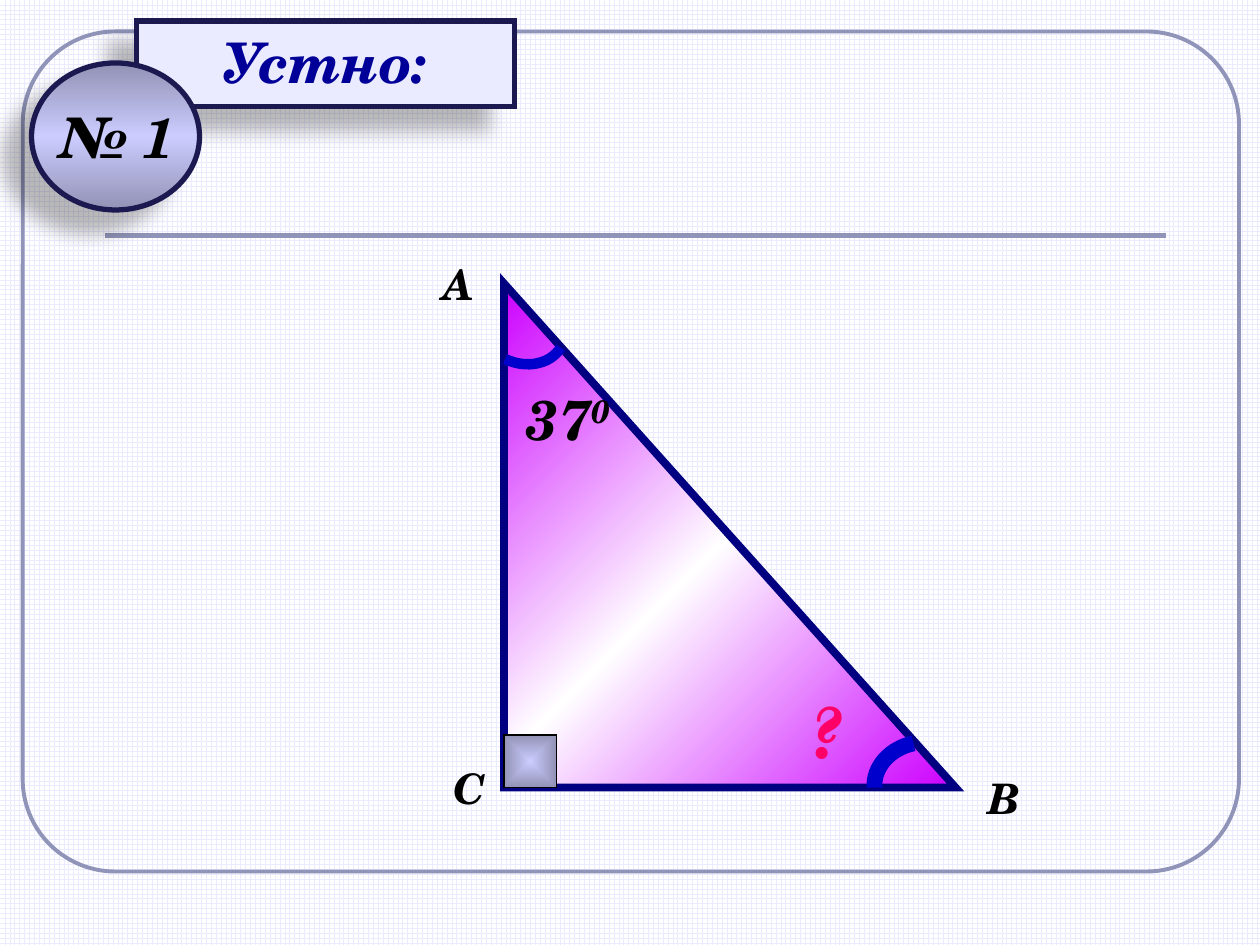
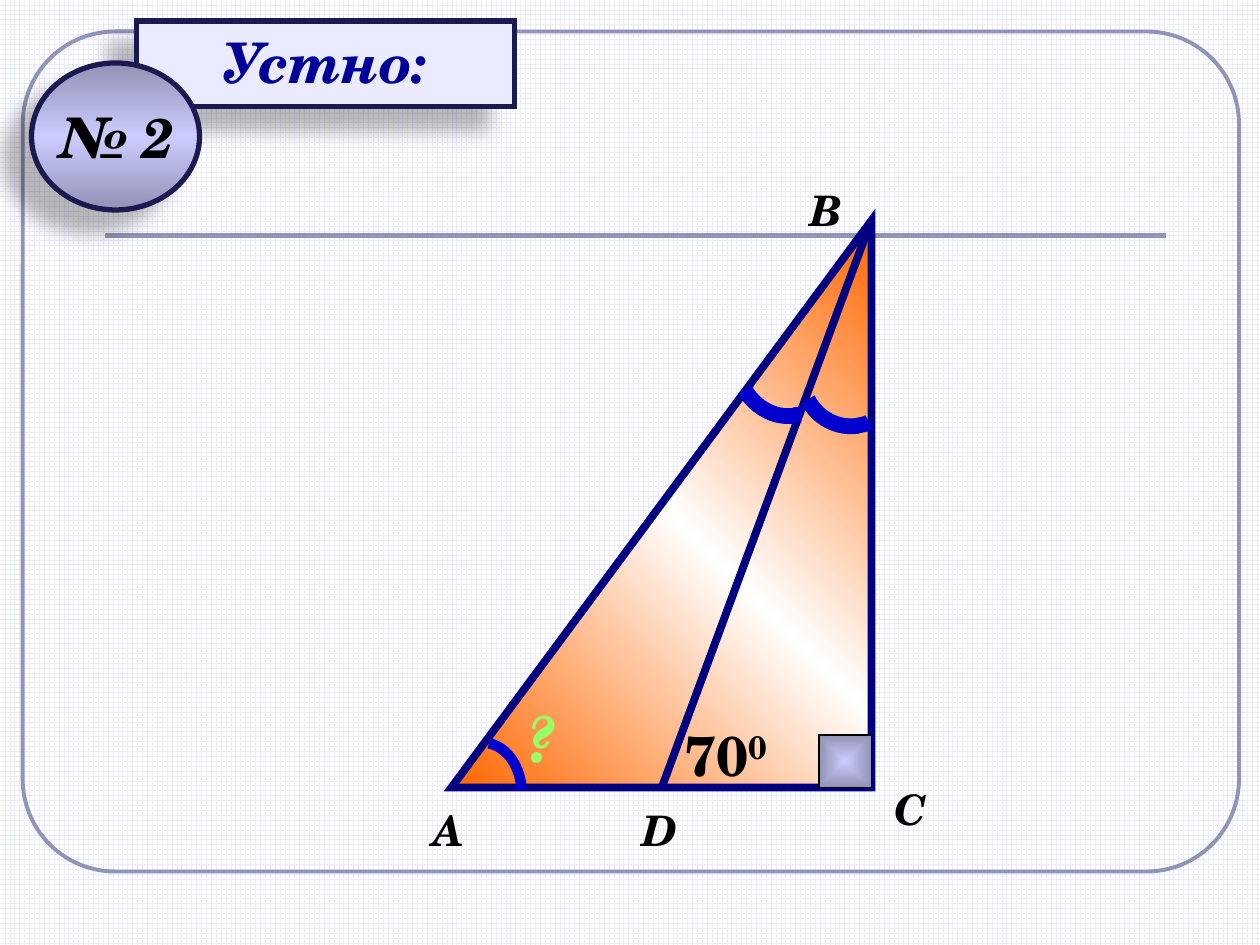
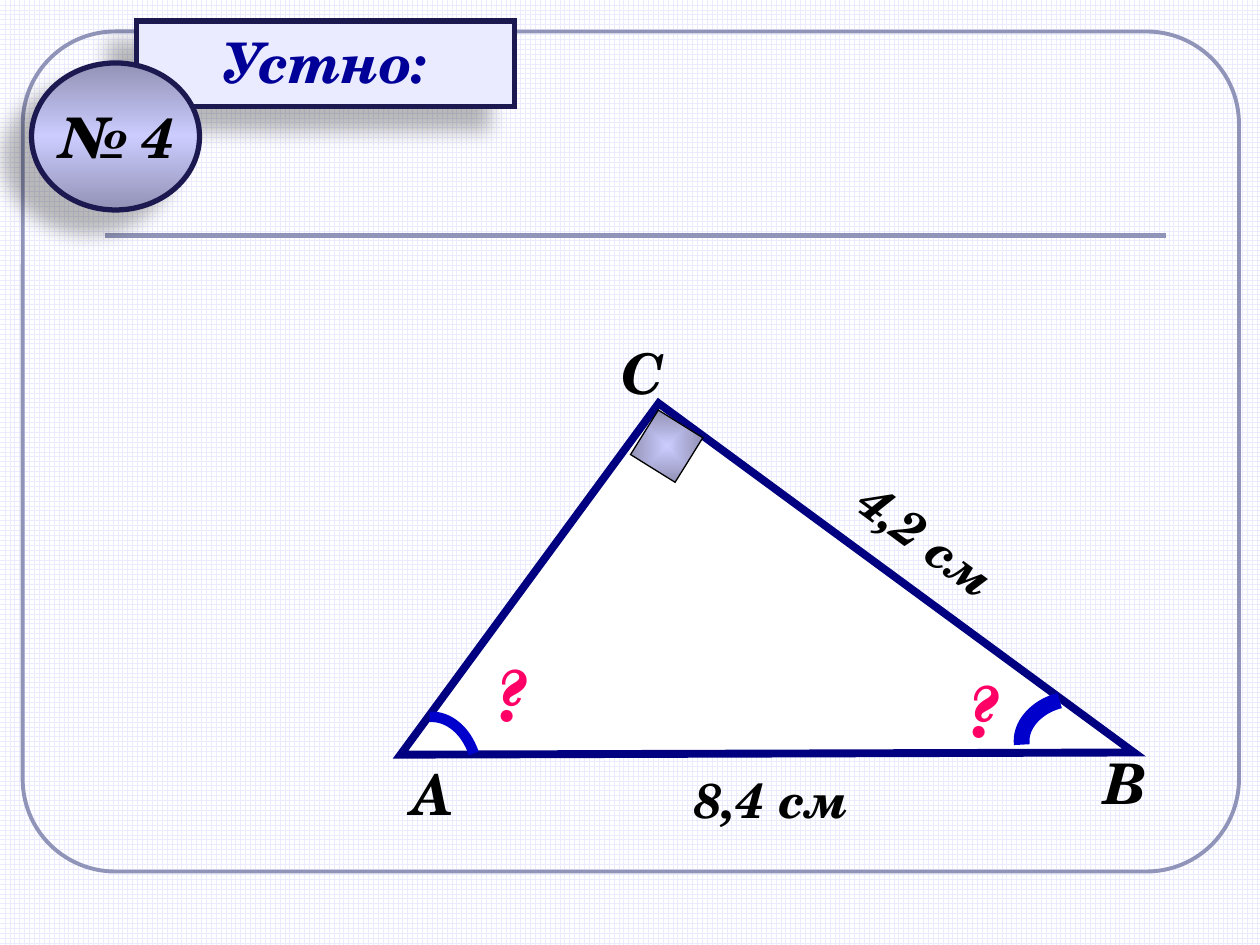
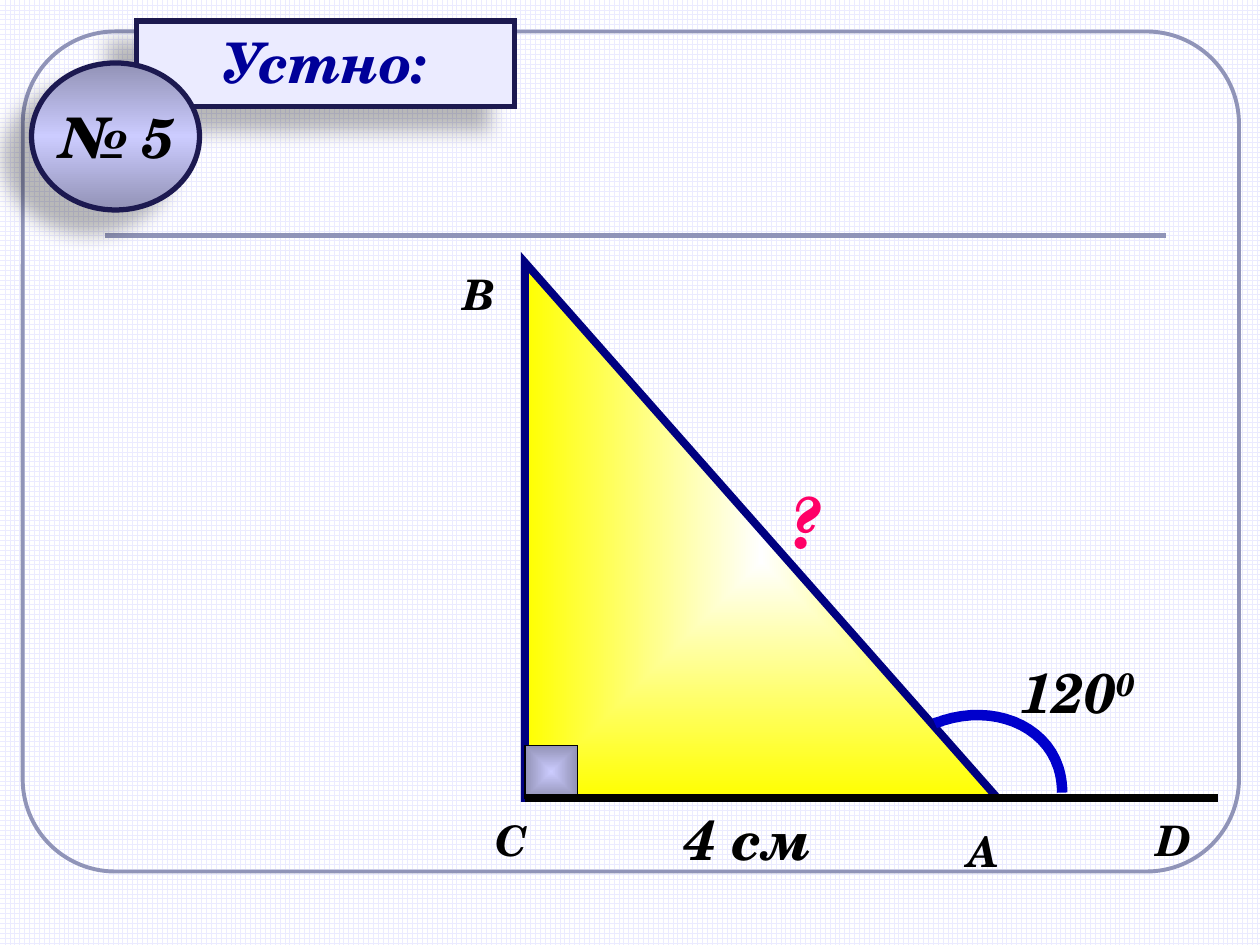
from dataclasses import dataclass

from lxml.etree import SubElement
from pptx import Presentation
from pptx.dml.color import RGBColor
from pptx.enum.dml import MSO_PATTERN
from pptx.enum.shapes import MSO_CONNECTOR, MSO_SHAPE
from pptx.enum.text import MSO_ANCHOR, MSO_AUTO_SIZE, PP_ALIGN
from pptx.oxml.ns import qn
from pptx.util import Pt


@dataclass(frozen=True)
class Theme:
    font: str = "TeX Gyre Schola"
    paper: str = "FFFFFF"
    panel: str = "EBEBFF"
    frame: str = "9094B8"
    border: str = "1C1950"
    title: str = "000099"
    ink: str = "000000"
    side: str = "000080"
    arc: str = "0000CC"
    steel: str = "9292B6"
    lilac: str = "CCCCFF"
    violet: str = "CC00FF"
    orange: str = "FF6600"
    olive: str = "99CC00"
    yellow: str = "FFFF00"
    pink: str = "FF0066"
    lime: str = "99FF66"
    vertex_size: int = 24
    length_size: int = 28
    heading_size: int = 32
    query_small: int = 36
    query_size: int = 40
    side_width: float = 4.5


THEME = Theme()
CORNER = 30  # side of the right-angle mark

# Text widths in ems, used to size the unwrapped boxes
EMS = {"А": 0.76, "В": 0.76, "С": 0.72, "D": 0.84, "?": 0.56,
       "37": 1.67, "70": 1.73, "120": 2.27,
       "4,2 см": 3.27, "8,4 см": 3.31, "4 см": 2.32}


# --- Fill, line and effect helpers ---

def rgb(code):
    return RGBColor.from_string(code)


def set_line(shape, color, width):
    shape.line.color.rgb = rgb(color)
    shape.line.width = Pt(width)
    outline = shape.element.spPr.find(qn("a:ln"))
    SubElement(outline, qn("a:miter"), lim="800000")


def set_gradient(shape, colors, angle=None, path="shape", focus=(50, 50, 50, 50)):
    """Evenly spaced stops; linear with an angle, otherwise around a focus."""
    shape.fill.gradient()
    gradient = shape.element.spPr.find(qn("a:gradFill"))
    for child in list(gradient):
        gradient.remove(child)
    gradient.set("rotWithShape", "1")
    stops = SubElement(gradient, qn("a:gsLst"))
    for index, color in enumerate(colors):
        position = 100000 * index // (len(colors) - 1)
        stop = SubElement(stops, qn("a:gs"), pos=str(position))
        SubElement(stop, qn("a:srgbClr"), val=color)
    if angle is not None:
        SubElement(gradient, qn("a:lin"), ang=str(angle * 60000), scaled="1")
        return
    around = SubElement(gradient, qn("a:path"), path=path)
    edges = {edge: str(share * 1000) for edge, share in zip("ltrb", focus)}
    SubElement(around, qn("a:fillToRect"), **edges)


def set_shadow(shape):
    effects = shape.element.spPr.find(qn("a:effectLst"))
    shadow = SubElement(effects, qn("a:outerShdw"), blurRad=str(Pt(11.8)),
                        dist=str(Pt(19.7)), dir=str(141 * 60000),
                        algn="ctr", rotWithShape="0")
    color = SubElement(shadow, qn("a:srgbClr"), val=THEME.ink)
    SubElement(color, qn("a:alpha"), val="28000")


# --- Element builders ---

def add_outlined(page, kind, left, top, width, height, color, weight):
    shape = page.shapes.add_shape(kind, Pt(left), Pt(top), Pt(width), Pt(height))
    shape.shadow.inherit = False
    set_line(shape, color, weight)
    return shape


def add_segment(page, start, end, color=THEME.side, width=THEME.side_width):
    segment = page.shapes.add_connector(
        MSO_CONNECTOR.STRAIGHT, *(Pt(value) for value in start + end))
    segment.line.color.rgb = rgb(color)
    segment.line.width = Pt(width)
    SubElement(segment.element.spPr, qn("a:effectLst"))
    return segment


def add_span(para, text, size, color=THEME.ink, italic=True, raised=False):
    span = para.add_run()
    span.text = text
    font = span.font
    font.name, font.size = THEME.font, Pt(size)
    font.bold, font.italic = True, italic
    font.color.rgb = rgb(color)
    if raised:
        span._r.get_or_add_rPr().set("baseline", "30000")


def add_label(page, text, left, top, size=THEME.vertex_size, color=THEME.ink,
              italic=True, degrees=False, rotation=0):
    box = page.shapes.add_textbox(Pt(left), Pt(top), Pt(EMS[text] * size + 14.4),
                                  Pt(1.2 * size + 7.2))
    box.rotation = rotation
    frame = box.text_frame
    frame.word_wrap = False
    frame.auto_size = MSO_AUTO_SIZE.SHAPE_TO_FIT_TEXT
    para = frame.paragraphs[0]
    add_span(para, text, size, color, italic)
    if degrees:
        add_span(para, "0", size, color, italic, raised=True)


def add_query(page, left, top, size=THEME.query_size, color=THEME.pink):
    add_label(page, "?", left, top, size, color)


def add_triangle(page, left, top, width, height, rotation=0, flipped=False):
    triangle = add_outlined(page, MSO_SHAPE.RIGHT_TRIANGLE, left, top, width,
                            height, THEME.side, THEME.side_width)
    triangle.rotation = rotation
    if flipped:
        triangle.element.spPr.xfrm.set("flipH", "1")
    return triangle


def add_right_angle(page, left, top, rotation=0):
    mark = add_outlined(page, MSO_SHAPE.RECTANGLE, left, top, CORNER, CORNER,
                        THEME.ink, 0.75)
    set_gradient(mark, (THEME.lilac, THEME.steel))
    mark.rotation = rotation


def bezier(points, t):
    weights = ((1 - t) ** 3, 3 * t * (1 - t) ** 2, 3 * t * t * (1 - t), t ** 3)
    return tuple(Pt(sum(weight * point[axis] for weight, point in zip(weights, points)))
                 for axis in (0, 1))


def add_arc(page, *points, width=6, steps=16):
    """Angle mark along chained cubic curves, three new points for each."""
    curve = [bezier(points[first:first + 4], step / steps)
             for first in range(0, len(points) - 1, 3)
             for step in range(1, steps + 1)]
    builder = page.shapes.build_freeform(Pt(points[0][0]), Pt(points[0][1]))
    builder.add_line_segments(curve, close=False)
    arc = builder.convert_to_shape()
    arc.shadow.inherit = False
    arc.fill.background()
    set_line(arc, THEME.arc, width)


# --- Shared parts ---

def style_layout(deck, layout, page):
    """Set the grid paper and move the frame and rule to the layout."""
    paper = deck.slide_master.background.fill
    paper.patterned()
    paper.pattern = MSO_PATTERN.LARGE_GRID
    paper.fore_color.rgb = rgb(THEME.panel)
    paper.back_color.rgb = rgb(THEME.paper)

    frame = add_outlined(page, MSO_SHAPE.ROUNDED_RECTANGLE, 13, 18, 695, 480,
                         THEME.frame, 2.25)
    frame.adjustments[0] = 0.11
    frame.fill.background()
    rule = add_segment(page, (60, 134.6), (666, 134.6), THEME.frame, 3)
    for shape in (frame, rule):
        layout.shapes.element.append(shape.element)


def add_heading(page, number):
    banner = add_outlined(page, MSO_SHAPE.RECTANGLE, 78, 12, 216, 49,
                          THEME.border, 3)
    banner.fill.solid()
    banner.fill.fore_color.rgb = rgb(THEME.panel)
    badge = add_outlined(page, MSO_SHAPE.OVAL, 18, 36, 96, 84, THEME.border, 3)
    set_gradient(badge, (THEME.steel, THEME.lilac, THEME.steel), angle=90)
    badge.text_frame.word_wrap = False
    for shape, text, color, anchor in (
            (banner, "Устно:", THEME.title, MSO_ANCHOR.TOP),
            (badge, f"№ {number}", THEME.ink, MSO_ANCHOR.MIDDLE)):
        set_shadow(shape)
        shape.text_frame.vertical_anchor = anchor
        para = shape.text_frame.paragraphs[0]
        para.alignment = PP_ALIGN.CENTER
        add_span(para, text, THEME.heading_size, color)


# --- Problems ---

def draw_acute_angle(page):
    add_label(page, "А", 246, 144)
    add_label(page, "С", 252, 432)
    add_label(page, "В", 558, 438)
    triangle = add_triangle(page, 288, 162, 258, 288)
    set_gradient(triangle, (THEME.violet, THEME.paper, THEME.violet), angle=45)
    add_right_angle(page, 288, 420)
    add_arc(page, (320.4, 198.7), (314.6, 208.1), (301, 211), (288.7, 205.2))
    add_arc(page, (499.7, 450), (499, 438.5), (508.3, 427.7), (522, 424.8), width=9)
    add_label(page, "37", 294, 216, THEME.heading_size, degrees=True)
    add_query(page, 456, 390)


def draw_bisector(page):
    add_label(page, "D", 360, 456)
    add_label(page, "А", 240, 456)
    add_label(page, "В", 456, 102)
    add_label(page, "С", 504, 444)
    triangle = add_triangle(page, 258, 126, 240, 324, flipped=True)
    set_gradient(triangle, (THEME.orange, THEME.paper, THEME.orange), angle=45)
    add_right_angle(page, 468, 420)
    add_segment(page, (495.2, 133.2), (378.7, 448.6))
    add_arc(page, (457.9, 236.9), (456.5, 236.9), (455, 236.9), (453.6, 237.6),
            (442.1, 239), (431.3, 232.6), (425.5, 222.5), width=9)
    add_arc(page, (496.8, 241.2), (494.6, 242.6), (492.5, 242.6), (489.6, 243.4),
            (478.1, 244.8), (467.3, 239), (461.5, 228.2), width=9)
    add_label(page, "70", 384, 408, THEME.heading_size, italic=False, degrees=True)
    add_arc(page, (279.4, 424.8), (290.2, 427), (297.4, 438.5), (298.1, 451.4))
    add_query(page, 294, 396, THEME.query_small, THEME.lime)


def draw_two_sides(page):
    triangle = add_triangle(page, 313.9, 262.1, 249.1, 337, rotation=126.3)
    set_gradient(triangle, (THEME.olive, THEME.paper), path="rect",
                 focus=(100, 100, 0, 0))
    add_right_angle(page, 366, 240, rotation=31.9)
    add_arc(page, (245.5, 409.7), (256.3, 409), (266.4, 417.6), (270.7, 430.6))
    add_arc(page, (583.9, 425.5), (582.5, 414.7), (591.8, 403.9), (605.5, 400.3),
            width=9)
    add_query(page, 276, 368.6)
    add_label(page, "В", 624, 424, THEME.heading_size)
    add_label(page, "А", 228, 430.6, THEME.heading_size)
    add_label(page, "С", 348, 190, THEME.heading_size)
    add_query(page, 546, 378)
    add_label(page, "4,2 см", 479, 289, THEME.length_size, rotation=36.5)
    add_label(page, "8,4 см", 390, 436, THEME.length_size)


def draw_outer_angle(page):
    triangle = add_triangle(page, 282, 168, 306, 270, rotation=90, flipped=True)
    set_gradient(triangle, (THEME.paper, THEME.yellow))
    add_right_angle(page, 300, 426)
    add_arc(page, (534.2, 413.3), (535.7, 412.6), (537.1, 412.6), (538.6, 411.8),
            (567.4, 402.5), (596.9, 414), (604.8, 438.5),
            (606.2, 442.8), (607, 447.8), (607, 452.9))
    add_label(page, "120", 576, 372, THEME.heading_size, degrees=True)
    add_label(page, "4 см", 384, 456, THEME.heading_size)
    add_label(page, "D", 654, 462)
    add_segment(page, (300, 456), (696, 456), THEME.ink)
    add_label(page, "С", 276, 462)
    add_label(page, "А", 546, 468)
    add_label(page, "В", 258, 150)
    add_query(page, 444, 270)


def main():
    deck = Presentation()
    deck.slide_width, deck.slide_height = Pt(720), Pt(540)
    blank = deck.slide_layouts[6]
    problems = {1: draw_acute_angle, 2: draw_bisector,
                4: draw_two_sides, 5: draw_outer_angle}
    for number, draw_problem in problems.items():
        page = deck.slides.add_slide(blank)
        if number == 1:
            style_layout(deck, blank, page)
        add_heading(page, number)
        draw_problem(page)
    deck.save("out.pptx")


if __name__ == "__main__":
    main()
